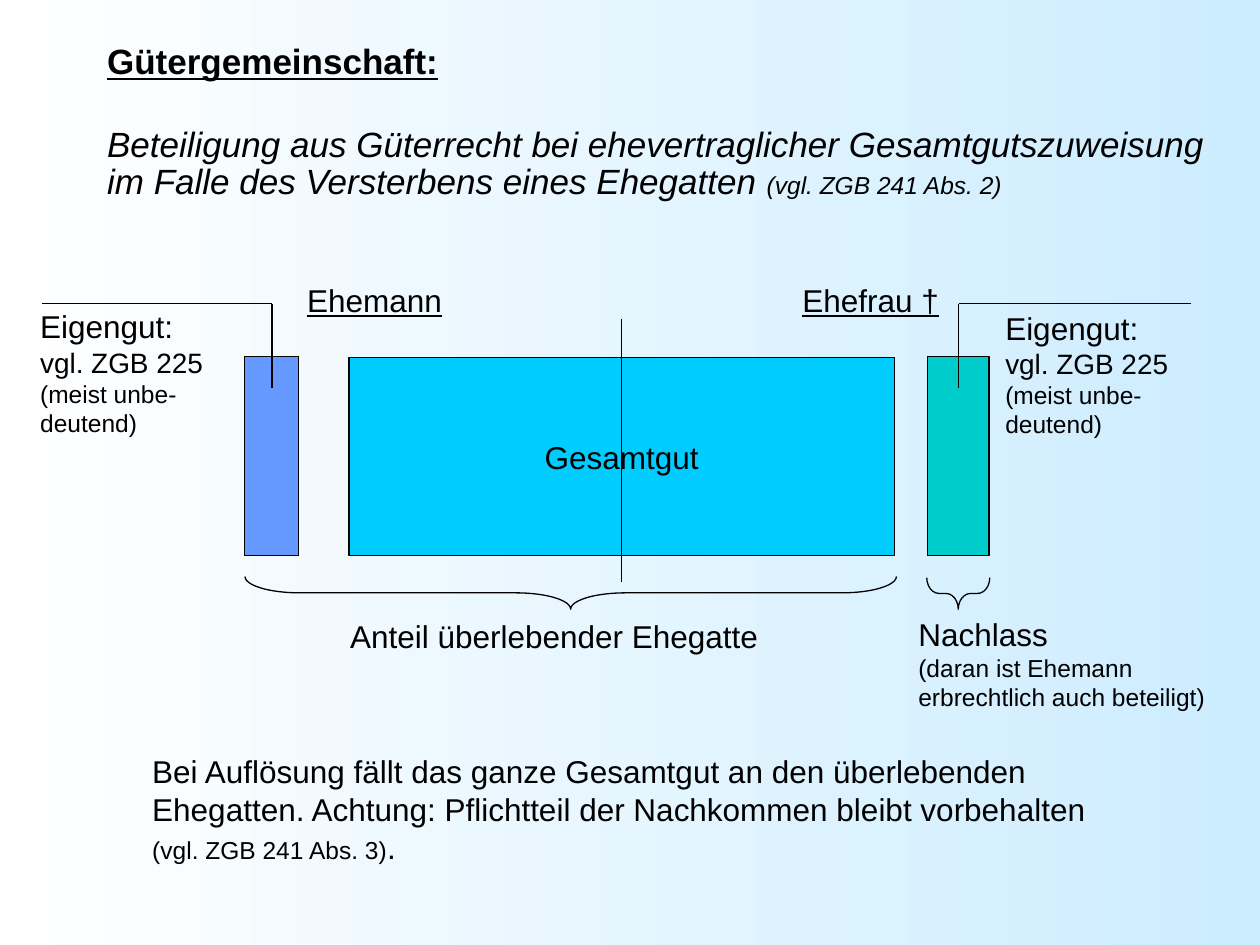
from dataclasses import dataclass
from typing import NamedTuple

from lxml import etree
from pptx import Presentation, util as u
from pptx.dml.color import RGBColor
from pptx.enum import shapes, text
from pptx.oxml.ns import qn


@dataclass(frozen=True)
class Theme:
    font: str = "Arial"
    ink: str = "000000"
    page_start: str = "FFFFFF"
    page_end: str = "CCECFF"
    husband: str = "6699FF"
    wife: str = "00CCCC"
    common: str = "00CCFF"
    title: int = 20
    body: int = 18
    medium: int = 16
    small: int = 14
    line: float = 0.75


class Run(NamedTuple):
    words: str
    size: int
    bold: bool = False
    italic: bool = False
    underline: bool = False


class Box(NamedTuple):
    left: float
    top: float
    width: float
    height: float


class Label(NamedTuple):
    box: Box
    paragraphs: list[list[Run]]
    wrap: bool = True


class Brace(NamedTuple):
    kind: shapes.MSO_SHAPE
    box: Box
    rotation: int
    curve: float


class Line(NamedTuple):
    x1: float
    y1: float
    x2: float
    y2: float


THEME = Theme()


def color(code: str) -> RGBColor:
    return RGBColor.from_string(code)


def lengths(values: tuple) -> list[u.Inches]:
    return [u.Inches(value) for value in values]


def write(frame, paragraphs: list[list[Run]], align=text.PP_ALIGN.LEFT) -> None:
    for index, runs in enumerate(paragraphs):
        paragraph = frame.add_paragraph() if index else frame.paragraphs[0]
        paragraph.alignment = align
        for item in runs:
            run = paragraph.add_run()
            run.text = item.words
            font = run.font
            font.name, font.size = THEME.font, u.Pt(item.size)
            font.bold, font.italic, font.underline = item.bold, item.italic, item.underline
            font.color.rgb = color(THEME.ink)


def outline(shape) -> None:
    shape.line.color.rgb = color(THEME.ink)
    shape.line.width = u.Pt(THEME.line)


def add_label(slide, label: Label) -> None:
    frame = slide.shapes.add_textbox(*lengths(label.box)).text_frame
    frame.word_wrap = label.wrap
    frame.auto_size = text.MSO_AUTO_SIZE.SHAPE_TO_FIT_TEXT
    write(frame, label.paragraphs)


def add_block(slide, box: Box, fill: str):
    shape = slide.shapes.add_shape(shapes.MSO_SHAPE.RECTANGLE, *lengths(box))
    shape.shadow.inherit = False
    shape.fill.solid()
    shape.fill.fore_color.rgb = color(fill)
    outline(shape)
    return shape


def add_brace(slide, brace: Brace) -> None:
    shape = slide.shapes.add_shape(brace.kind, *lengths(brace.box))
    shape.shadow.inherit = False
    shape.rotation = brace.rotation
    shape.adjustments[0] = brace.curve
    shape.fill.background()
    outline(shape)


def add_line(slide, line: Line) -> None:
    connector = slide.shapes.add_connector(shapes.MSO_CONNECTOR.STRAIGHT, *lengths(line))
    outline(connector)
    etree.SubElement(connector._element.spPr, qn("a:effectLst"))


def add_title(slide) -> None:
    title = slide.shapes.title
    title.left, title.top, title.width, title.height = lengths(Box(0.75, 0.64, 9.02, 0.68))
    frame = title.text_frame
    frame.word_wrap = True
    frame.auto_size = text.MSO_AUTO_SIZE.NONE
    frame.vertical_anchor = text.MSO_ANCHOR.MIDDLE
    write(frame, [
        [Run("Gütergemeinschaft:", THEME.title, bold=True, underline=True)],
        [Run("Beteiligung aus Güterrecht bei ehevertraglicher Gesamtgutszuweisung "
             "im Falle des Versterbens eines Ehegatten ", THEME.title, italic=True),
         Run("(vgl. ZGB 241 Abs. 2)", THEME.small, italic=True)],
    ])
    for paragraph in frame.paragraphs:
        paragraph.line_spacing = 0.9
        paragraph.space_before = u.Pt(0)
    frame.paragraphs[1].space_before = u.Pt(25.5)


def paint_background(slide) -> None:
    fill = slide.background.fill
    fill.gradient()
    fill.gradient_angle = 0
    for stop, code in zip(fill.gradient_stops, (THEME.page_start, THEME.page_end)):
        stop.color.rgb = color(code)


def main() -> None:
    presentation = Presentation()
    presentation.slide_width, presentation.slide_height = u.Inches(10), u.Inches(7.5)
    slide = presentation.slides.add_slide(presentation.slide_layouts[5])
    paint_background(slide)
    add_title(slide)

    # Property blocks, with the common property split in the middle
    add_block(slide, Box(1.94, 2.83, 0.43, 1.58), THEME.husband)
    add_block(slide, Box(7.36, 2.83, 0.49, 1.58), THEME.wife)
    common = add_block(slide, Box(2.77, 2.84, 4.33, 1.57), THEME.common)
    common.text_frame.word_wrap = False
    common.text_frame.vertical_anchor = text.MSO_ANCHOR.MIDDLE
    write(common.text_frame, [[Run("Gesamtgut", THEME.body)]], text.PP_ALIGN.CENTER)
    add_line(slide, Line(4.93, 2.53, 4.93, 4.62))

    # Leaders from each spouse's own property to its note
    for block_x, outer_x in ((2.16, 0.33), (7.61, 9.45)):
        add_line(slide, Line(block_x, 3.08, block_x, 2.41))
        add_line(slide, Line(block_x, 2.41, outer_x, 2.41))

    # Braces under the two shares
    add_brace(slide, Brace(shapes.MSO_SHAPE.LEFT_BRACE, Box(4.4, 2.12, 0.26, 5.17), 270, 1.68))
    add_brace(slide, Brace(shapes.MSO_SHAPE.RIGHT_BRACE, Box(7.48, 4.46, 0.25, 0.5), 90, 0.39))

    # Labels and closing remark
    own_property = [
        [Run("Eigengut:", THEME.body)],
        [Run("vgl. ZGB 225 ", THEME.medium), Run("(meist unbe-deutend)", THEME.small)],
    ]
    labels = [
        Label(Box(2.34, 2.18, 1.27, 0.4), [[Run("Ehemann", THEME.body, underline=True)]], False),
        Label(Box(6.27, 2.18, 1.34, 0.4), [[Run("Ehefrau †", THEME.body, underline=True)]]),
        Label(Box(0.22, 2.39, 1.75, 1.13), own_property),
        Label(Box(7.88, 2.4, 1.75, 1.13), own_property),
        Label(Box(2.68, 4.85, 3.65, 0.4), [[Run("Anteil überlebender Ehegatte", THEME.body)]]),
        Label(Box(7.19, 4.83, 2.75, 0.87), [
            [Run("Nachlass", THEME.body)],
            [Run("(daran ist Ehemann erbrechtlich auch beteiligt)", THEME.small)]]),
        Label(Box(1.11, 5.92, 7.62, 1), [
            [Run("Bei Auflösung fällt das ganze Gesamtgut an den überlebenden", THEME.body)],
            [Run("Ehegatten. Achtung: Pflichtteil der Nachkommen bleibt vorbehalten", THEME.body)],
            [Run("(vgl. ZGB 241 Abs. 3)", THEME.small), Run(".", THEME.body)]], False),
    ]
    for label in labels:
        add_label(slide, label)

    presentation.save("out.pptx")


if __name__ == "__main__":
    main()
